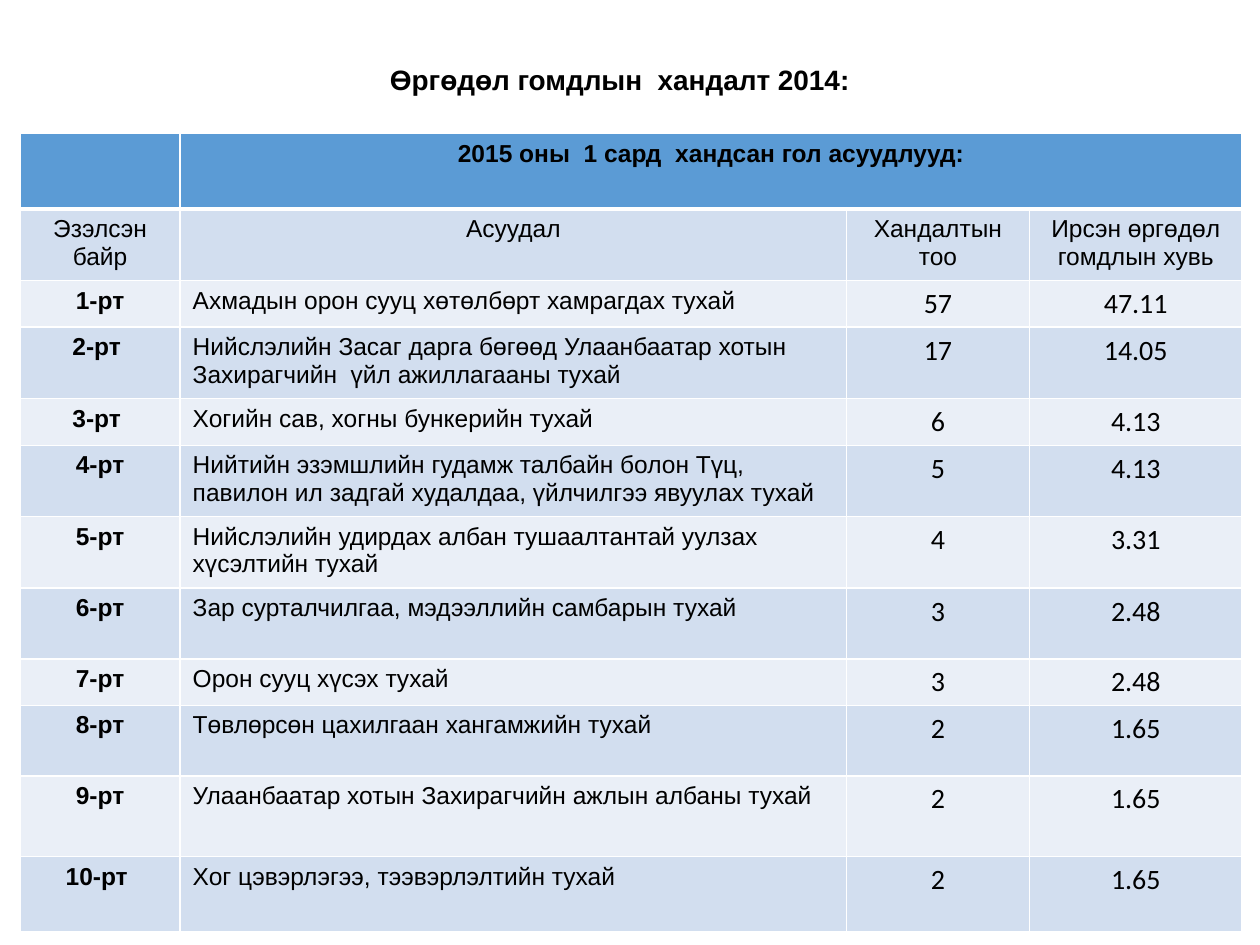
from lxml import etree
from pptx import Presentation
from pptx.dml.color import RGBColor
from pptx.enum.text import MSO_ANCHOR, PP_ALIGN
from pptx.oxml.ns import qn
from pptx.util import Inches, Pt

TITLE = "Өргөдөл гомдлын  хандалт 2014:"
TABLE_HEADING = "2015 оны  1 сард  хандсан гол асуудлууд:"
COLUMN_HEADINGS = ("Эзэлсэн байр", "Асуудал", "Хандалтын тоо", "Ирсэн өргөдөл гомдлын хувь")
ISSUES = [
    ("1-рт", "Ахмадын орон сууц хөтөлбөрт хамрагдах тухай", "57", "47.11"),
    ("2-рт ", "Нийслэлийн Засаг дарга бөгөөд Улаанбаатар хотын Захирагчийн  үйл ажиллагааны тухай",
     "17", "14.05"),
    ("3-рт ", "Хогийн сав, хогны бункерийн тухай", "6", "4.13"),
    ("4-рт", "Нийтийн эзэмшлийн гудамж талбайн болон Түц, павилон ил задгай худалдаа, "
     "үйлчилгээ явуулах тухай", "5", "4.13"),
    ("5-рт", "Нийслэлийн удирдах албан тушаалтантай уулзах хүсэлтийн тухай", "4", "3.31"),
    ("6-рт", "Зар сурталчилгаа, мэдээллийн самбарын тухай", "3", "2.48"),
    ("7-рт", "Орон сууц хүсэх тухай", "3", "2.48"),
    ("8-рт", "Төвлөрсөн цахилгаан хангамжийн тухай", "2", "1.65"),
    ("9-рт", "Улаанбаатар хотын Захирагчийн ажлын албаны тухай", "2", "1.65"),
    ("10-рт ", "Хог цэвэрлэгээ, тээвэрлэлтийн тухай", "2", "1.65"),
]
COLUMN_WIDTHS = (1.27, 5.29, 1.45, 1.69)
ROW_HEIGHTS = (0.6, 0.56, 0.37, 0.56, 0.37, 0.56, 0.56, 0.56, 0.37, 0.56, 0.64, 0.6)

BLACK = RGBColor(0x00, 0x00, 0x00)
WHITE = RGBColor(0xFF, 0xFF, 0xFF)
HEADER_BLUE = RGBColor(0x5B, 0x9B, 0xD5)
BANDS = (RGBColor(0xEA, 0xEF, 0xF7), RGBColor(0xD2, 0xDE, 0xEF))

# (font, size, bold, alignment)
HEADING_STYLE = ("Arial", 14, True, PP_ALIGN.CENTER)
LABEL_STYLE = ("Arial", 14, False, PP_ALIGN.CENTER)
NUMBER_STYLE = ("Calibri", 16, False, PP_ALIGN.CENTER)
ISSUE_STYLES = (HEADING_STYLE, ("Arial", 14, False, PP_ALIGN.LEFT), NUMBER_STYLE, NUMBER_STYLE)


def write(frame, words, style):
    font, size, bold, alignment = style
    paragraph = frame.paragraphs[0]
    paragraph.alignment = alignment
    run = paragraph.add_run()
    run.text = words
    run.font.name = font
    run.font.size = Pt(size)
    run.font.bold = bold
    run.font.color.rgb = BLACK
    return paragraph


def paint(cell, fill, top=1, bottom=1):
    """Fill a cell and give it white borders, with widths in points."""
    properties = cell._tc.get_or_add_tcPr()
    for side, width in (("lnL", 1), ("lnR", 1), ("lnT", top), ("lnB", bottom)):
        line = etree.SubElement(properties, qn(f"a:{side}"), w=str(Pt(width)))
        solid = etree.SubElement(line, qn("a:solidFill"))
        etree.SubElement(solid, qn("a:srgbClr"), val=str(WHITE))
    cell.fill.solid()
    cell.fill.fore_color.rgb = fill


prs = Presentation()
prs.slide_width, prs.slide_height = Inches(10), Inches(7.5)
slide = prs.slides.add_slide(prs.slide_layouts[6])

title = slide.shapes.add_textbox(Inches(0.52), Inches(0.39), Inches(8.8), Inches(0.51)).text_frame
title.word_wrap = True
title.vertical_anchor = MSO_ANCHOR.MIDDLE
write(title, TITLE, ("Arial", 16, True, PP_ALIGN.CENTER)).line_spacing = 0.9

table = slide.shapes.add_table(
    len(ROW_HEIGHTS), len(COLUMN_WIDTHS), Inches(0.16), Inches(1.06),
    Inches(sum(COLUMN_WIDTHS)), Inches(sum(ROW_HEIGHTS))).table
for column, width in zip(table.columns, COLUMN_WIDTHS):
    column.width = Inches(width)
for row, height in zip(table.rows, ROW_HEIGHTS):
    row.height = Inches(height)

table.cell(0, 1).merge(table.cell(0, 3))
for cell in table.rows[0].cells:
    paint(cell, HEADER_BLUE, bottom=3)
write(table.cell(0, 1).text_frame, TABLE_HEADING, HEADING_STYLE)

for r, record in enumerate([COLUMN_HEADINGS] + ISSUES, start=1):
    styles = [LABEL_STYLE] * 4 if r == 1 else ISSUE_STYLES
    for c, (words, style) in enumerate(zip(record, styles)):
        cell = table.cell(r, c)
        paint(cell, BANDS[r % 2], top=3 if r == 1 else 1)
        write(cell.text_frame, words, style)

prs.save("out.pptx")
